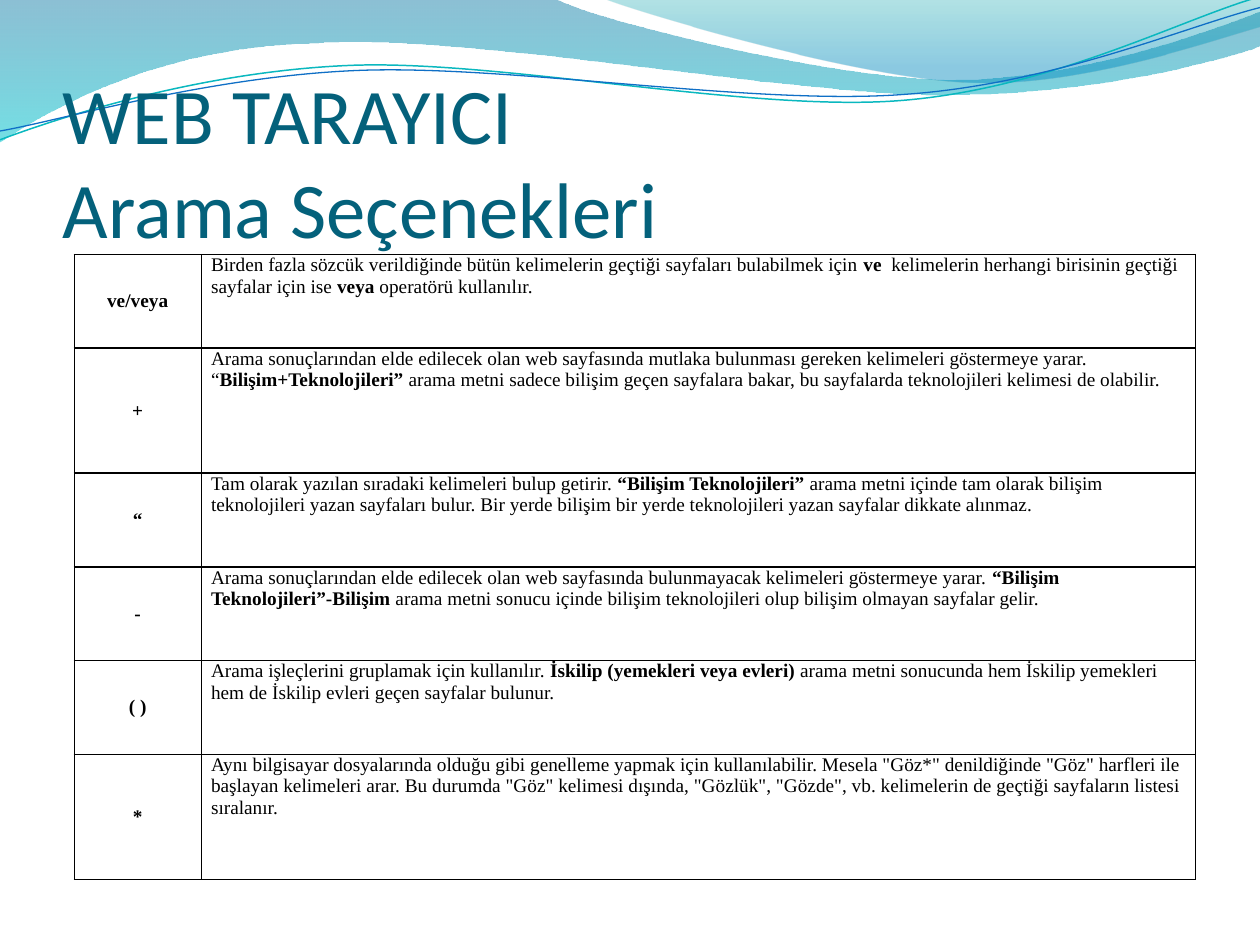
import pptx
import pptx.util
import pptx.dml.color
import pptx.enum.text
import pptx.oxml
import pptx.oxml.ns
from dataclasses import dataclass
from lxml import etree

Inches = pptx.util.Inches
Align = pptx.enum.text.PP_ALIGN
Anchor = pptx.enum.text.MSO_ANCHOR
qn = pptx.oxml.ns.qn


@dataclass(frozen=True)
class Theme:
    title_color: str = "04617B"
    ink: str = "000000"
    teal_line: str = "0AB8BF"
    blue_line: str = "0F6FC6"
    left_wave: tuple = ((0, "0074A1", 45), (100, "00C6CF", 55))
    right_wave: tuple = ((0, "00A1A9", 30), (80, "008BBF", 45))
    title_font: str = "Calibri"
    table_font: str = "Times New Roman"
    title_size: float = 45
    table_size: float = 11
    border: float = 1


def rgb(color):
    return pptx.dml.color.RGBColor.from_string(color)


def write_text(frame, text, *, font, size, color, align=Align.LEFT, starts_bold=False):
    paragraph = frame.paragraphs[0]
    paragraph.alignment = align
    for index, line in enumerate(text.split("\n")):
        if index:
            paragraph.add_line_break()
        for part, words in enumerate(line.split("|")):
            run = paragraph.add_run()
            run.text = words
            run.font.name = font
            run.font.size = pptx.util.Pt(size)
            run.font.color.rgb = rgb(color)
            run.font.bold = starts_bold != (part % 2 == 1)


class SlideBuilder:
    def __init__(self, slide, theme):
        self.slide = slide
        self.theme = theme

    def outline(self, segments, close):
        ends = [(Inches(s[-2]), Inches(s[-1])) for s in segments]
        builder = self.slide.shapes.build_freeform(*ends[0])
        builder.add_line_segments(ends[1:], close=close)
        shape = builder.convert_to_shape()
        shape.shadow.inherit = False
        strokes = list(shape._element.iter(qn("a:lnTo")))
        for stroke, segment in zip(strokes, segments[1:]):
            if len(segment) == 6:
                bend = etree.Element(qn("a:cubicBezTo"))
                for x, y in zip(segment[::2], segment[1::2]):
                    etree.SubElement(bend, qn("a:pt"), x=str(Inches(x) - shape.left),
                                     y=str(Inches(y) - shape.top))
                stroke.getparent().replace(stroke, bend)
        return shape

    def wave(self, segments, stops):
        shape = self.outline(segments, True)
        shape.line.fill.background()
        shape.fill.gradient()
        gradient = shape._element.spPr.find(qn("a:gradFill"))
        stop_xml = "".join(
            f'<a:gs pos="{pos * 1000}"><a:srgbClr val="{color}">'
            f'<a:alpha val="{alpha * 1000}"/></a:srgbClr></a:gs>'
            for pos, color, alpha in stops)
        gradient.getparent().replace(gradient, pptx.oxml.parse_xml(
            f'<a:gradFill {pptx.oxml.ns.nsdecls("a")} rotWithShape="1">'
            f'<a:gsLst>{stop_xml}</a:gsLst><a:lin ang="5400000" scaled="0"/></a:gradFill>'))

    def curve(self, segments, color, width):
        shape = self.outline(segments, False)
        shape.fill.background()
        shape.line.color.rgb = rgb(color)
        shape.line.width = pptx.util.Pt(width)

    def title(self, text, left, top, width, height):
        frame = self.slide.shapes.add_textbox(
            Inches(left), Inches(top), Inches(width), Inches(height)).text_frame
        frame.word_wrap = True
        frame.vertical_anchor = Anchor.BOTTOM
        frame.margin_left = frame.margin_right = frame.margin_bottom = 0
        write_text(frame, text, font=self.theme.title_font,
                   size=self.theme.title_size, color=self.theme.title_color)

    def borders(self, cell):
        properties = cell._tc.get_or_add_tcPr()
        for position, side in enumerate(("lnL", "lnR", "lnT", "lnB")):
            line = etree.Element(qn(f"a:{side}"),
                                 w=str(pptx.util.Pt(self.theme.border)))
            fill = etree.SubElement(line, qn("a:solidFill"))
            etree.SubElement(fill, qn("a:srgbClr"), val=self.theme.ink)
            properties.insert(position, line)

    def table(self, entries, left, top, columns, heights):
        table = self.slide.shapes.add_table(
            len(entries), len(columns), Inches(left), Inches(top),
            Inches(sum(columns)), Inches(sum(heights))).table
        table.first_row = table.horz_banding = False
        for column, width in zip(table.columns, columns):
            column.width = Inches(width)
        for row, height, entry in zip(table.rows, heights, entries):
            row.height = Inches(height)
            for index, (cell, text) in enumerate(zip(row.cells, entry)):
                is_operator = index == 0
                cell.margin_left = pptx.util.Pt(5.4)
                cell.margin_right = Inches(0.08)
                cell.margin_top = cell.margin_bottom = 0
                cell.vertical_anchor = Anchor.MIDDLE if is_operator else Anchor.TOP
                cell.fill.background()
                self.borders(cell)
                write_text(cell.text_frame, text, font=self.theme.table_font,
                           size=self.theme.table_size, color=self.theme.ink,
                           align=Align.CENTER if is_operator else Align.LEFT,
                           starts_bold=is_operator)


LEFT_WAVE = [
    (0, 0), (4.4, -0.01), (4.76, 0.17, 6.64, 0.63, 7.58, 0.63),
    (8.53, 0.63, 9.58, 0.26, 10, 0.09), (10.01, 0.36),
    (9.83, 0.44, 8.7, 0.76, 7.46, 0.75), (6.22, 0.75, 3.82, 0.28, 2.57, 0.34),
    (1.29, 0.36, 0.46, 0.83, -0.01, 1.13), (0, 0)]
RIGHT_WAVE = [
    (4.79, -0.01), (5.09, 0.11, 6.82, 0.62, 7.69, 0.65),
    (8.56, 0.69, 9.61, 0.32, 10, 0.21), (10, 0), (4.79, -0.01)]
TEAL_CURVE = [
    (0, 1.11), (0.48, 0.93, 1.58, 0.57, 2.77, 0.52),
    (3.95, 0.47, 5.93, 0.89, 7.13, 0.8), (8.33, 0.71, 9.38, 0.15, 9.98, -0.02)]
BLUE_CURVE = [
    (0, 1.04), (0.47, 0.96, 1.64, 0.61, 2.83, 0.56),
    (4.03, 0.51, 5.97, 0.84, 7.17, 0.75), (8.36, 0.67, 9.41, 0.21, 10, 0.06)]

SEARCH_OPERATORS = [
    ("ve/veya", "Birden fazla sözcük verildiğinde bütün kelimelerin geçtiği sayfaları "
     "bulabilmek için |ve  |kelimelerin herhangi birisinin geçtiği sayfalar için ise "
     "|veya| operatörü kullanılır."),
    ("+", "Arama sonuçlarından elde edilecek olan web sayfasında mutlaka bulunması gereken "
     "kelimeleri göstermeye yarar. “|Bilişim+Teknolojileri”| arama metni sadece bilişim "
     "geçen sayfalara bakar, bu sayfalarda teknolojileri kelimesi de olabilir."),
    ("“", "Tam olarak yazılan sıradaki kelimeleri bulup getirir. |“Bilişim Teknolojileri” |"
     "arama metni içinde tam olarak bilişim teknolojileri yazan sayfaları bulur. Bir yerde "
     "bilişim bir yerde teknolojileri yazan sayfalar dikkate alınmaz."),
    ("-", "Arama sonuçlarından elde edilecek olan web sayfasında bulunmayacak kelimeleri "
     "göstermeye yarar. |“Bilişim Teknolojileri”-Bilişim| arama metni sonucu içinde bilişim "
     "teknolojileri olup bilişim olmayan sayfalar gelir."),
    ("( )", "Arama işleçlerini gruplamak için kullanılır. |İskilip (yemekleri veya evleri) |"
     "arama metni sonucunda hem İskilip yemekleri hem de İskilip evleri geçen sayfalar "
     "bulunur."),
    ("*", "Aynı bilgisayar dosyalarında olduğu gibi genelleme yapmak için kullanılabilir. "
     "Mesela \"Göz*\" denildiğinde \"Göz\" harfleri ile başlayan kelimeleri arar. Bu durumda "
     "\"Göz\" kelimesi dışında, \"Gözlük\", \"Gözde\", vb. kelimelerin de geçtiği sayfaların "
     "listesi sıralanır."),
]


def main():
    deck = pptx.Presentation()
    deck.slide_width, deck.slide_height = Inches(10), Inches(7.5)
    theme = Theme()
    builder = SlideBuilder(deck.slides.add_slide(deck.slide_layouts[6]), theme)
    builder.wave(LEFT_WAVE, theme.left_wave)
    builder.wave(RIGHT_WAVE, theme.right_wave)
    builder.curve(TEAL_CURVE, theme.teal_line, 0.85)
    builder.curve(BLUE_CURVE, theme.blue_line, 0.75)
    builder.title("WEB TARAYICI\nArama Seçenekleri", 0.5, 0.77, 9, 1.25)
    row_shares = (3, 4, 3, 3, 3, 4)
    table_height = 4.96
    heights = [table_height * share / sum(row_shares) for share in row_shares]
    builder.table(SEARCH_OPERATORS, 0.59, 2.02, (1.01, 7.89), heights)
    deck.save("out.pptx")


if __name__ == "__main__":
    main()
